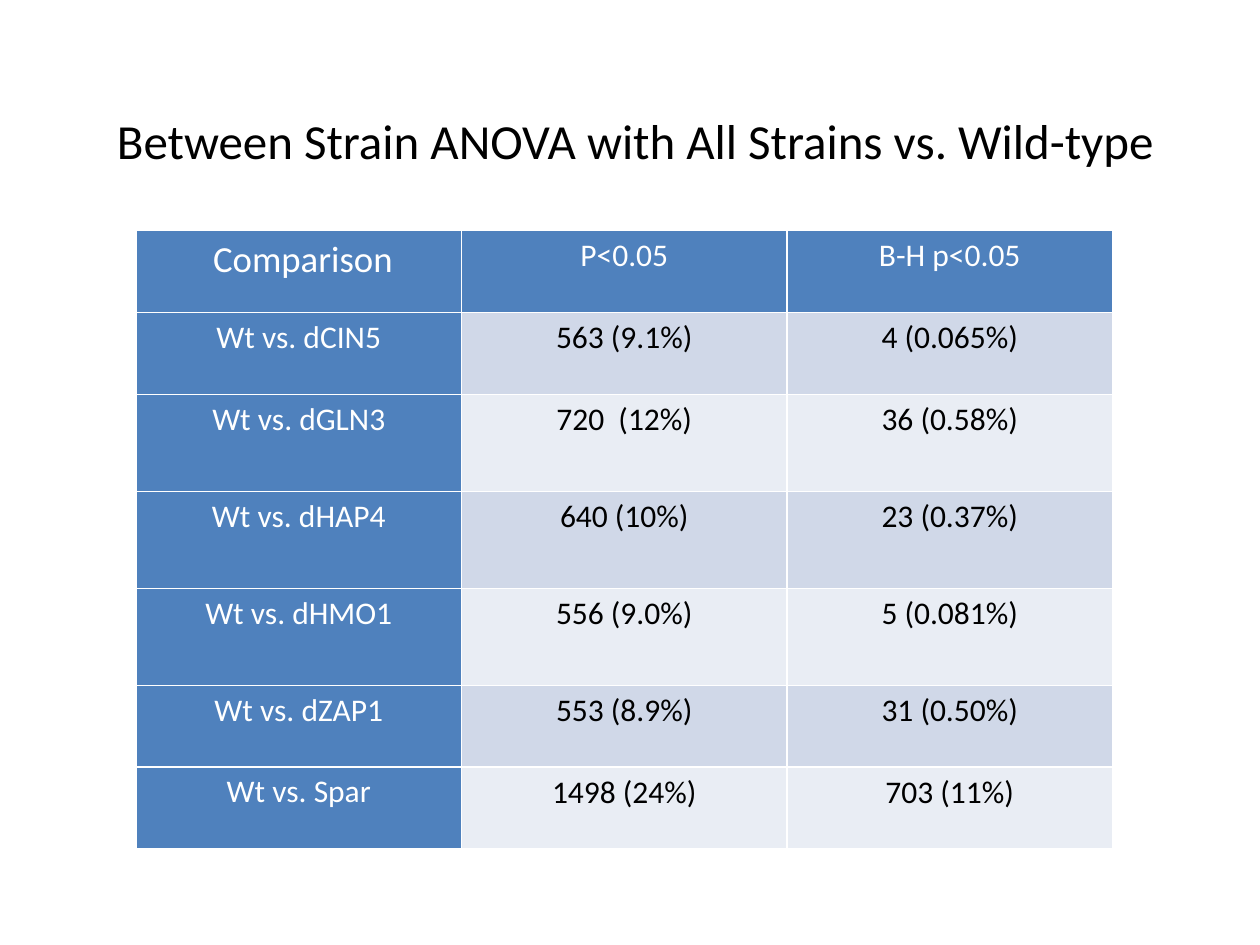
from dataclasses import dataclass

from lxml import etree
from pptx import Presentation
from pptx import util as u
from pptx.dml.color import RGBColor
from pptx.enum import text
from pptx.oxml.ns import qn


@dataclass(frozen=True)
class Theme:
    face: str = "Calibri"
    ink: str = "000000"
    pale: str = "FFFFFF"
    blue: str = "4F81BD"
    bands: tuple[str, str] = ("D0D8E8", "E9EDF4")
    title: int = 28
    head: int = 21
    body: int = 18
    rule: int = 1


@dataclass(frozen=True)
class Row:
    cells: tuple[str, str, str]
    high: float = 0.65


THEME = Theme()
ROWS = (
    Row((" Comparison", "P<0.05", "B-H p<0.05")),
    Row(("Wt vs. dCIN5", "563 (9.1%)", "4 (0.065%)")),
    Row(("Wt vs. dGLN3", "720  (12%)", "36 (0.58%)"), 0.77),
    Row(("Wt vs. dHAP4", "640 (10%)", "23 (0.37%)"), 0.77),
    Row(("Wt vs. dHMO1", "556 (9.0%)", "5 (0.081%)"), 0.77),
    Row(("Wt vs. dZAP1", "553 (8.9%)", "31 (0.50%)")),
    Row(("Wt vs. Spar", "1498 (24%)", "703 (11%)")),
)


def style(para, size: int, tint: str) -> None:
    font = para.font
    font.name, font.size, font.bold = THEME.face, u.Pt(size), False
    font.color.rgb = RGBColor.from_string(tint)


def frame(cell) -> None:
    props = cell._tc.get_or_add_tcPr()
    for spot, side in enumerate(("lnL", "lnR", "lnT", "lnB")):
        line = etree.Element(qn(f"a:{side}"), w=str(u.Pt(THEME.rule)))
        fill = etree.SubElement(line, qn("a:solidFill"))
        etree.SubElement(fill, qn("a:srgbClr"), val=THEME.pale)
        props.insert(spot, line)


def draw_cell(cell, words: str, row: int, col: int) -> None:
    dark = row == 0 or col == 0
    cell.fill.solid()
    cell.fill.fore_color.rgb = RGBColor.from_string(
        THEME.blue if dark else THEME.bands[(row - 1) % 2])
    frame(cell)
    cell.text = words
    para = cell.text_frame.paragraphs[0]
    para.alignment = text.PP_ALIGN.CENTER
    style(para, THEME.head if row == col == 0 else THEME.body,
          THEME.pale if dark else THEME.ink)
    if col == 0 or (row, col) == (0, 1):
        para.line_spacing = 1.15
        cell.margin_left = cell.margin_right = u.Inches(0.07)
        cell.margin_top = cell.margin_bottom = 0


def draw_table(slide, rows: tuple[Row, ...]) -> None:
    high = sum(row.high for row in rows)
    grid = slide.shapes.add_table(
        len(rows), 3, u.Inches(1.08), u.Inches(1.83),
        u.Inches(7.75), u.Inches(high)).table
    for r, row in enumerate(rows):
        grid.rows[r].height = u.Inches(row.high)
        for c, words in enumerate(row.cells):
            draw_cell(grid.cell(r, c), words, r, c)


def draw_title(slide, words: str) -> None:
    box = slide.shapes.add_textbox(
        u.Inches(0.83), u.Inches(0.83), u.Inches(8.52), u.Inches(0.57))
    body = box.text_frame
    body.word_wrap = False
    body.auto_size = text.MSO_AUTO_SIZE.SHAPE_TO_FIT_TEXT
    body.text = words
    style(body.paragraphs[0], THEME.title, THEME.ink)


def main() -> None:
    """Build the slide of strain comparisons and save it."""
    deck = Presentation()
    deck.slide_width, deck.slide_height = u.Inches(10), u.Inches(7.5)
    slide = deck.slides.add_slide(deck.slide_layouts[6])
    draw_table(slide, ROWS)
    draw_title(slide, "Between Strain ANOVA with All Strains vs. Wild-type")
    deck.save("out.pptx")


if __name__ == "__main__":
    main()
